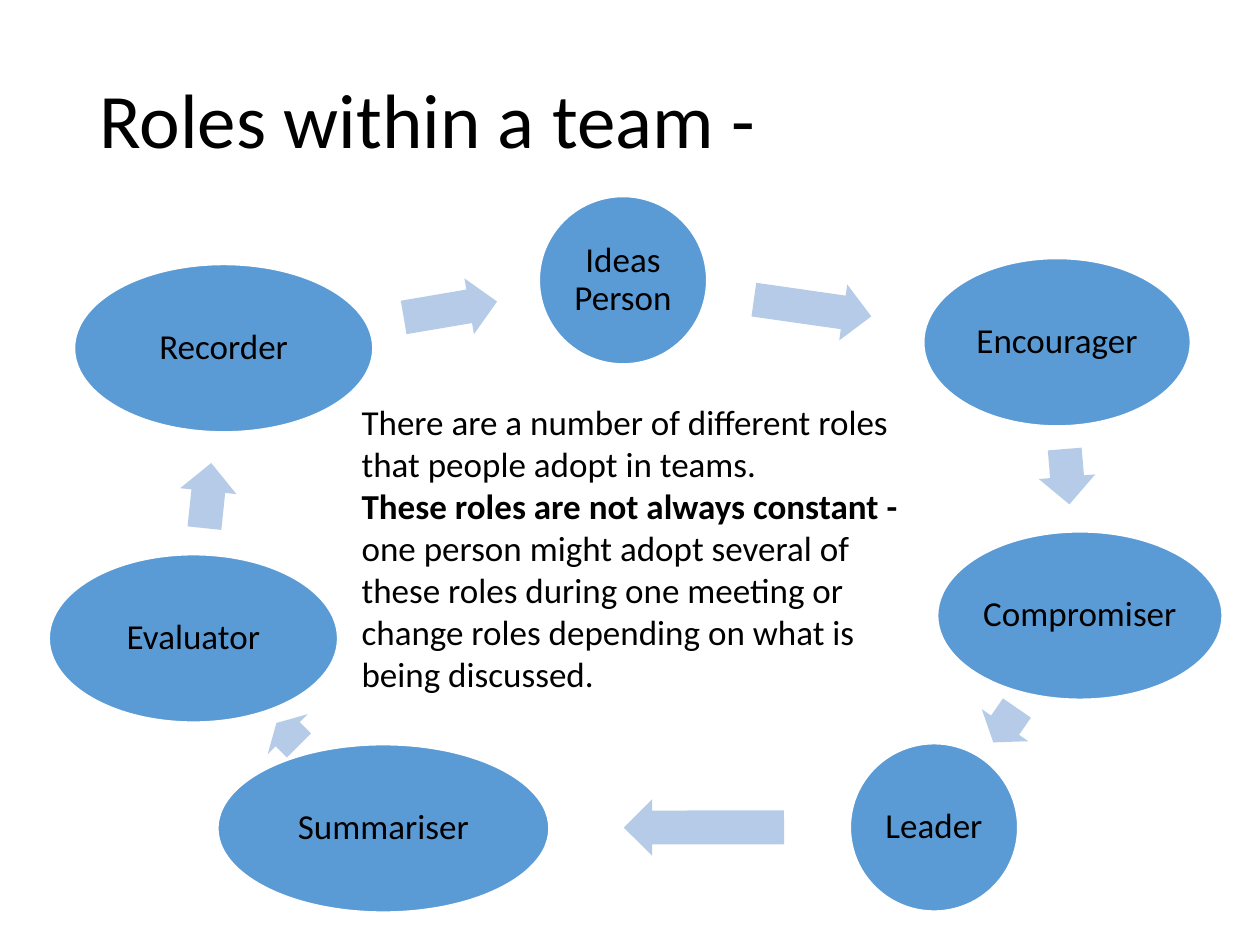
from math import atan2, degrees

from pptx import Presentation
from pptx.dml.color import RGBColor
from pptx.enum.shapes import MSO_SHAPE as SHAPE
from pptx.enum.text import MSO_ANCHOR as ANCHOR, MSO_AUTO_SIZE as AUTO, PP_ALIGN as ALIGN
from pptx.util import Cm, Pt


def color(value):
    return RGBColor.from_string(value)


class RoleSlide:
    font = "Calibri"
    text, oval_fill, oval_line, arrow_fill = "000000", "5B9BD5", "FFFFFF", "B5CBE7"
    oval_height, arrow_height = 3.38, 1.14

    def __init__(self, prs):
        self.s = prs.slides.add_slide(prs.slide_layouts[5])

    def set_all(self, target, formats):
        for name, value in formats.items():
            setattr(target, name, value)

    def run(self, p, text, size=20, bold=False):
        r = p.add_run()
        r.text = text
        self.set_all(r.font, {"name": self.font, "size": Pt(size), "bold": bold})
        r.font.color.rgb = color(self.text)

    def title(self, text, left, top, width, height):
        sp = self.s.shapes.title
        self.set_all(sp, {"left": Cm(left), "top": Cm(top),
                          "width": Cm(width), "height": Cm(height)})
        tf = sp.text_frame
        self.set_all(tf, {"auto_size": AUTO.NONE, "vertical_anchor": ANCHOR.MIDDLE})
        p = tf.paragraphs[0]
        self.set_all(p, {"alignment": ALIGN.LEFT, "line_spacing": 0.9})
        self.run(p, text, size=44)

    def centred_shape(self, kind, x, y, width, height, fill):
        sp = self.s.shapes.add_shape(kind, Cm(x - width / 2), Cm(y - height / 2),
                                     Cm(width), Cm(height))
        sp.shadow.inherit = False
        sp.fill.solid()
        sp.fill.fore_color.rgb = color(fill)
        return sp

    def oval(self, text, x, y, width):
        sp = self.centred_shape(SHAPE.OVAL, x, y, width, self.oval_height, self.oval_fill)
        sp.line.color.rgb = color(self.oval_line)
        sp.line.width = Pt(1)
        tf = sp.text_frame
        margins = {f"margin_{side}": Cm(0.08) for side in ("left", "right", "top", "bottom")}
        self.set_all(tf, {"word_wrap": True, "vertical_anchor": ANCHOR.MIDDLE, **margins})
        p = tf.paragraphs[0]
        self.set_all(p, {"alignment": ALIGN.CENTER, "line_spacing": 0.9})
        self.run(p, text)

    def arrow(self, x, y, length, rotation):
        sp = self.centred_shape(SHAPE.RIGHT_ARROW, x, y, length,
                                self.arrow_height, self.arrow_fill)
        sp.line.fill.background()
        sp.adjustments[0], sp.adjustments[1] = 0.6, 0.5
        sp.rotation = rotation

    def text_box(self, paragraphs, left, top, width, height):
        tf = self.s.shapes.add_textbox(Cm(left), Cm(top), Cm(width), Cm(height)).text_frame
        self.set_all(tf, {"word_wrap": True, "auto_size": AUTO.SHAPE_TO_FIT_TEXT})
        for i, runs in enumerate(paragraphs):
            p = tf.add_paragraph() if i else tf.paragraphs[0]
            for text, bold in runs:
                self.run(p, text, bold=bold)


# Role, centre x, centre y, width; then the arrow to the next role: x, y, length
ROLES = [
    ("Ideas Person", 12.56, 5.65, 3.38, (16.38, 6.21, 2.39)),
    ("Encourager", 21.31, 6.9, 5.38, (21.51, 9.61, 1.12)),
    ("Compromiser", 21.77, 12.41, 5.74, (20.26, 14.62, 0.84)),
    ("Leader", 18.83, 16.68, 3.38, (14.19, 16.68, 3.23)),
    ("Summariser", 7.73, 16.7, 6.68, (5.8, 14.8, 0.64)),
    ("Evaluator", 3.9, 12.87, 5.82, (4.19, 9.99, 1.32)),
    ("Recorder", 4.51, 7.02, 6.02, (9.08, 6.24, 1.91)),
]

EXPLANATION = [
    [("There are a number of different roles that people adopt in teams.", False)],
    [("These roles are not always constant - ", True),
     ("one person might adopt several of these roles during one meeting or "
      "change roles depending on what is being discussed.", False)],
]


def main():
    prs = Presentation()
    prs.slide_width, prs.slide_height = Cm(25.4), Cm(19.05)
    slide = RoleSlide(prs)

    slide.title("Roles within a team -", 1.75, 1.02, 21.9, 2.95)

    # Cycle of roles: each arrow points along the line to the next centre
    for role, following in zip(ROLES, ROLES[1:] + ROLES[:1]):
        name, x, y, width, arrow = role
        slide.oval(name, x, y, width)
        slide.arrow(*arrow, degrees(atan2(following[2] - y, following[1] - x)) % 360)

    # Explanation in the middle of the cycle
    slide.text_box(EXPLANATION, 7.04, 7.95, 12.01, 6.25)

    prs.save("out.pptx")


if __name__ == "__main__":
    main()
